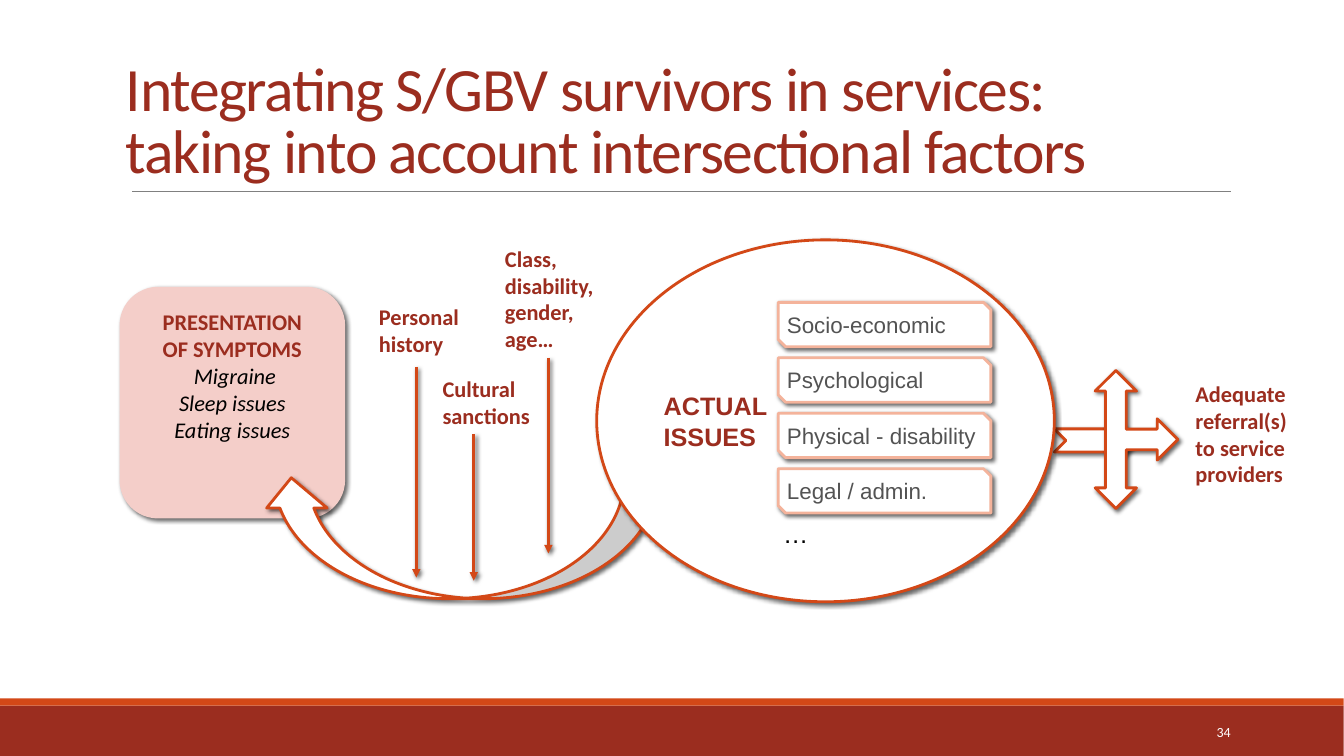
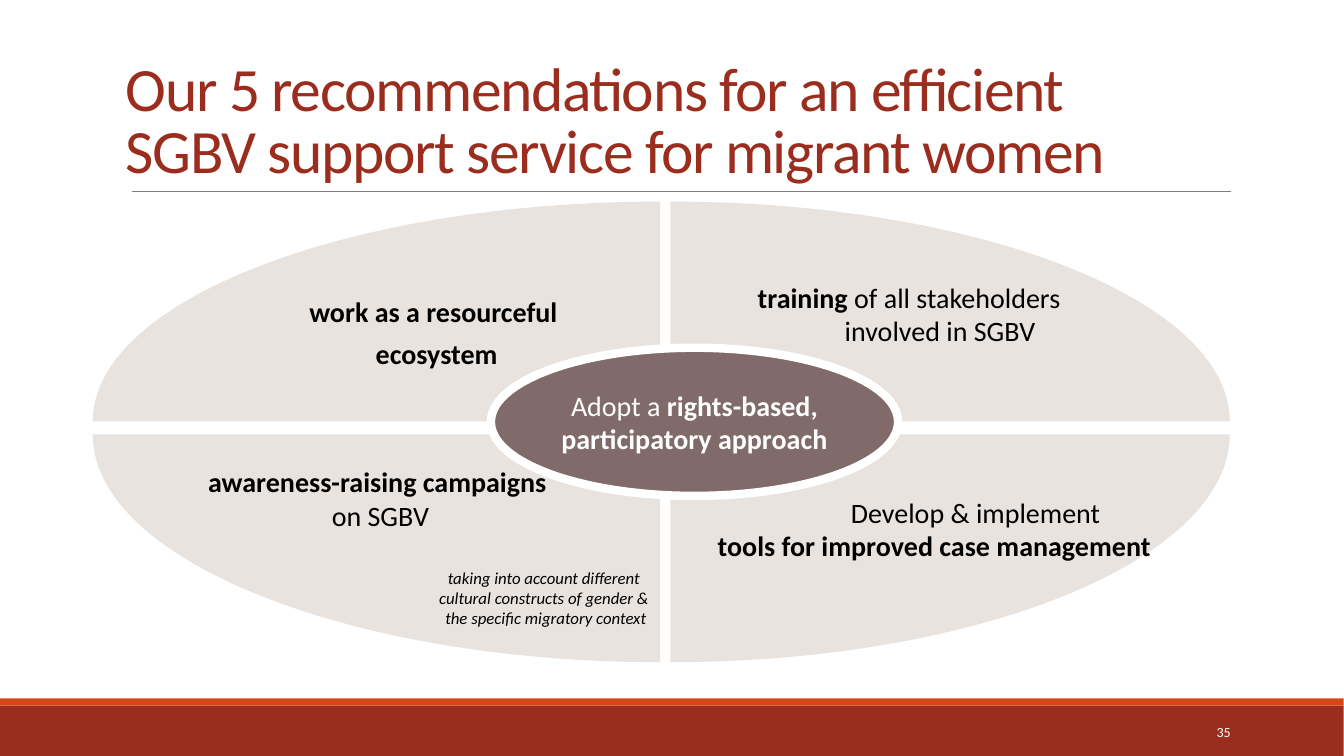
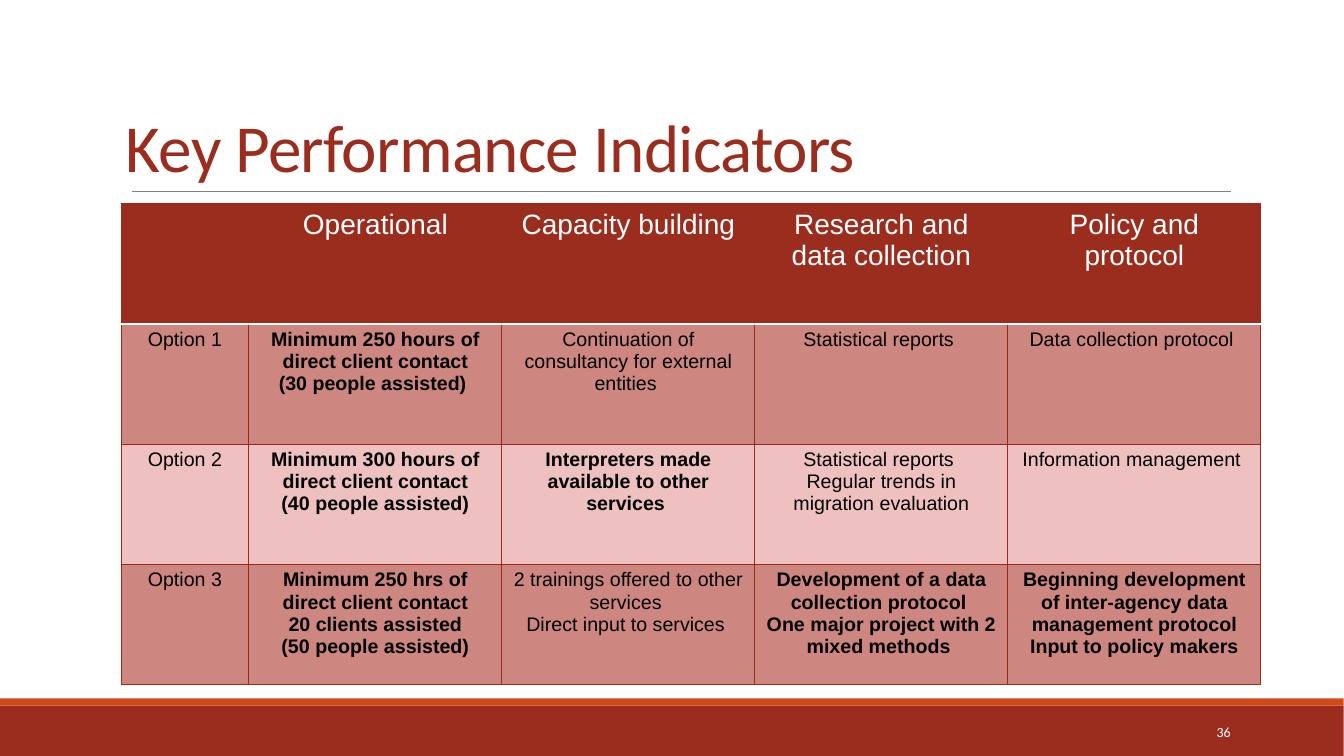
from lxml.etree import SubElement
from pptx import Presentation
from pptx.dml.color import RGBColor
from pptx.enum.shapes import MSO_CONNECTOR, MSO_SHAPE
from pptx.enum.text import MSO_ANCHOR, MSO_AUTO_SIZE, PP_ALIGN
from pptx.oxml.ns import qn
from pptx.util import Pt

PX = 9144
ARC = 0.55
BRICK, ORANGE, PEACH, ROSE = "9B2D1F", "D34817", "F4B39B", "F4CEC9"
WHITE, BLACK, GREY, RULE = "FFFFFF", "000000", "535353", "808080"
SAND, MAUVE = "E9E3DF", "806B6A"
BORDER, BAND_DARK, BAND_LIGHT = "9B2A1B", "CD8680", "EEC1C0"
LEFT, CENTER, RIGHT = PP_ALIGN.LEFT, PP_ALIGN.CENTER, PP_ALIGN.RIGHT
TOP, MIDDLE, BOTTOM = MSO_ANCHOR.TOP, MSO_ANCHOR.MIDDLE, MSO_ANCHOR.BOTTOM


def px(*lengths):
    """Turn px lengths into EMU."""
    return [round(n * PX) for n in lengths]


def rgb(color):
    """Turn a hex string into a colour."""
    return RGBColor.from_string(color)


def effects(sp, shadow):
    """Give a shape the soft shadow, or none."""
    lst = SubElement(sp.element.spPr, qn("a:effectLst"))
    if shadow:
        outer = SubElement(lst, qn("a:outerShdw"), blurRad=str(Pt(3)), dist=str(Pt(2)),
                           dir="2700000", algn="tl", rotWithShape="0")
        clr = SubElement(outer, qn("a:srgbClr"), val=BLACK)
        SubElement(clr, qn("a:alpha"), val="60000")


def paint(sp, fill, line=None, width=2):
    """Set the fill and outline of a shape."""
    sp.fill.solid()
    sp.fill.fore_color.rgb = rgb(fill)
    if line:
        sp.line.color.rgb = rgb(line)
        sp.line.width = Pt(width)
    else:
        sp.line.fill.background()


def shape(s, kind, box, fill, line=None, width=2, shadow=False, rotation=0):
    """Add a preset shape in a px box."""
    sp = s.shapes.add_shape(kind, *px(*box))
    sp.rotation = rotation
    paint(sp, fill, line, width)
    effects(sp, shadow)
    return sp


def connector(s, x1, y1, x2, y2, color, width, arrow=False):
    """Add a straight line, or a shadowed arrow."""
    cn = s.shapes.add_connector(MSO_CONNECTOR.STRAIGHT, *px(x1, y1, x2, y2))
    cn.line.color.rgb = rgb(color)
    cn.line.width = Pt(width)
    if arrow:
        SubElement(cn.element.spPr.find(qn("a:ln")), qn("a:tailEnd"), type="triangle")
    effects(cn, arrow)
    return cn


def frame(tf, insets=(5, 5, 5, 5), anchor=TOP):
    """Set the insets, anchor and wrapping of a text frame."""
    tf.margin_left, tf.margin_top, tf.margin_right, tf.margin_bottom = px(*insets)
    tf.vertical_anchor = anchor
    tf.word_wrap = True
    tf.auto_size = MSO_AUTO_SIZE.NONE


def write(tf, paras, size, color, font="Calibri", align=LEFT, bold=False):
    """Write paragraphs, each a string or a list of (text, style[, colour]) runs."""
    for i, runs in enumerate(paras):
        p = tf.paragraphs[0] if i == 0 else tf.add_paragraph()
        p.alignment = align
        for text, style, *own in [(runs, "")] if isinstance(runs, str) else runs:
            for n, line in enumerate(text.split("\n")):
                if n:
                    p.add_line_break()
                r = p.add_run()
                r.text = line
                r.font.name, r.font.size = font, Pt(size)
                r.font.bold = bold or "b" in style
                r.font.italic = "i" in style
                r.font.color.rgb = rgb(own[0] if own else color)


def label(s, box, paras, size, color, insets=(5, 5, 5, 5), anchor=TOP, **style):
    """Add a text box."""
    tf = s.shapes.add_textbox(*px(*box)).text_frame
    frame(tf, insets, anchor)
    write(tf, paras, size, color, **style)
    return tf


def build_layout(prs):
    """Draw the bands and title rule once, on the title-only layout."""
    layout = prs.slide_layouts[5]
    s = prs.slides.add_slide(layout)
    parts = [shape(s, MSO_SHAPE.RECTANGLE, (0, 700, 1333, 50), BRICK),
             shape(s, MSO_SHAPE.RECTANGLE, (0, 693, 1333, 7), ORANGE),
             connector(s, 131, 190, 1221, 190, RULE, 0.5)]
    for i, part in enumerate(parts):
        part.element.xpath(".//p:cNvPr")[0].set("id", str(20 + i))
        layout.shapes.element.append(part.element)
    return layout, s


def head(s, text, number, size=44, spacing=-100, width=1100):
    """Fill the title and add the page number."""
    title = s.shapes.title
    title.left, title.top, title.width, title.height = px(120, 31, width, 159)
    tf = title.text_frame
    frame(tf, anchor=BOTTOM)
    write(tf, [text], size, BRICK)
    tf.paragraphs[0].line_spacing = 0.85
    for rpr in title.element.iter(qn("a:rPr")):
        rpr.set("spc", str(spacing))
    label(s, (1180, 714, 46, 25), [str(number)], 10, WHITE, anchor=MIDDLE, align=RIGHT)


def symptoms(s, x, y):
    """Place the symptom box."""
    sp = shape(s, MSO_SHAPE.ROUNDED_RECTANGLE, (x, y, 221, 227), ROSE, ROSE, shadow=True)
    frame(sp.text_frame, (16, 9, 16, 9))
    write(sp.text_frame,
          [[("PRESENTATION OF SYMPTOMS", "b", BRICK)], [(" Migraine", "i")],
           [("Sleep issues", "i")], [("Eating issues", "i")]], 16, BLACK, align=CENTER)


def factor(s, x, y, w, h, text, dx, start, end):
    """Place a factor label with the arrow that leads down from it."""
    label(s, (x, y, w, h), [text], 16, BRICK, bold=True)
    connector(s, x + dx, y + start, x + dx, y + end, ORANGE, 2, arrow=True)


def issues(s, x, y):
    """Place the ellipse of actual issues and its list."""
    sp = shape(s, MSO_SHAPE.OVAL, (x, y, 454, 359), WHITE, ORANGE, shadow=True)
    frame(sp.text_frame, (0, 5, 5, 5), MIDDLE)
    write(sp.text_frame, ["ACTUAL", "ISSUES"], 18, BRICK, "Arial", bold=True)
    names = ("Socio-economic", "Psychological", "Physical - disability", "Legal / admin.")
    for i, name in enumerate(names):
        card = shape(s, MSO_SHAPE.SNIP_2_DIAG_RECTANGLE, (x + 180, y + 62 + 55 * i, 211, 44),
                     WHITE, PEACH, shadow=True)
        frame(card.text_frame, anchor=MIDDLE)
        write(card.text_frame, [name], 16, GREY, "Arial")
    label(s, (x + 180, y + 271, 73, 40), ["…"], 18, BLACK, font="Arial")


def referral(s, x, y):
    """Place the three-way arrow and the referral label."""
    shape(s, MSO_SHAPE.LEFT_RIGHT_UP_ARROW, (x, y + 23, 137, 82), WHITE, ORANGE,
          shadow=True, rotation=90)
    label(s, (x + 122, y, 152, 118), ["Adequate referral(s)", "to service providers"],
          16, BRICK, bold=True)


def factors_slide(s):
    """Build the slide on intersectional factors."""
    head(s, "Integrating S/GBV survivors in services:\n"
            "taking into account intersectional factors", 34)
    shape(s, MSO_SHAPE.NOTCHED_RIGHT_ARROW, (1046, 414, 82, 46), WHITE, ORANGE, shadow=True)
    symptoms(s, 120, 286)
    back = shape(s, MSO_SHAPE.CURVED_LEFT_ARROW, (396, 337, 120, 394), WHITE, ORANGE,
                 shadow=True, rotation=90)
    for i, value in enumerate((0.28, 0.5, 0.25)):
        back.adjustments[i] = value
    issues(s, 592, 238)
    referral(s, 1059, 372)
    factor(s, 371, 296, 99, 64, "Personal history", 42, 68, 277)
    factor(s, 434, 367, 99, 64, "Cultural sanctions", 36, 64, 209)
    factor(s, 496, 238, 130, 118, "Class, disability, gender, age…", 48, 117, 311)


def quadrant(s, x, y, rx, ry):
    """Draw a quarter ellipse with its corner at x, y and signed radii."""
    fb = s.shapes.build_freeform(*px(x, y))
    fb.add_line_segments([px(x, y + ry), px(x + rx, y)], close=True)
    sp = fb.convert_to_shape()
    first, last = sp.element.iter(qn("a:lnTo"))
    x1, y1, x2, y2 = (int(seg[0].get(axis)) for seg in (first, last) for axis in "xy")
    curve = SubElement(last.getparent(), qn("a:cubicBezTo"))
    for cx, cy in ((x1 + ARC * (x2 - x1), y1), (x2, y2 + ARC * (y1 - y2)), (x2, y2)):
        SubElement(curve, qn("a:pt"), x=str(round(cx)), y=str(round(cy)))
    last.getparent().replace(last, curve)
    paint(sp, SAND)
    effects(sp, False)


def advice(s, box, paras):
    """Place the centred text of one recommendation."""
    return label(s, box, paras, 20, BLACK, (0, 0, 0, 0), MIDDLE, align=CENTER)


def recommendations_slide(s):
    """Build the slide of four quadrants around a core."""
    head(s, "Our 5 recommendations for an efficient SGBV support service for migrant women",
         35, width=1069)
    for x, rx in ((665, 555), (655, -563)):
        for y, ry in ((431, 226), (418, -218)):
            quadrant(s, x, y, rx, ry)
    tf = advice(s, (204, 292, 452, 76), [[("work as a resourceful", "b")], [(" ecosystem", "b")]])
    tf.paragraphs[0].space_after = Pt(6)
    core = shape(s, MSO_SHAPE.OVAL, (487, 345, 404, 147), MAUVE, WHITE, 6)
    frame(core.text_frame, (0, 0, 0, 0), MIDDLE)
    write(core.text_frame, [[("Adopt a ", ""), ("rights-based, participatory approach", "b")]],
          20, WHITE, align=CENTER)
    tf = advice(s, (674, 278, 462, 67),
                [[("training", "b"), (" of all stakeholders ", "")], "involved in SGBV"])
    tf.paragraphs[1]._p.get_or_add_pPr().set("marL", str(55 * PX))
    advice(s, (126, 461, 503, 67), [[("awareness-raising campaigns ", "b")], "on SGBV"])
    label(s, (387, 558, 309, 71),
          [[(line, "i")] for line in ("taking into account different ",
                                      "cultural constructs of gender & ",
                                      "the specific migratory context")],
          12, BLACK, (10, 5, 10, 5), align=CENTER)
    tf = advice(s, (712, 491, 518, 67),
                ["Develop & implement ", [("tools for improved case management", "b")]])
    tf.paragraphs[1].alignment = LEFT


def style_cell(cell, fill, top, bottom):
    """Set the borders, then the fill, of a table cell."""
    tcpr = cell._tc.get_or_add_tcPr()
    side = (BORDER, 0.75)
    for tag, (color, width) in zip(("lnL", "lnR", "lnT", "lnB"), (side, side, top, bottom)):
        ln = SubElement(tcpr, qn("a:" + tag), w=str(Pt(width)))
        SubElement(SubElement(ln, qn("a:solidFill")), qn("a:srgbClr"), val=color)
    cell.fill.solid()
    cell.fill.fore_color.rgb = rgb(fill)


def kpi_table(s, x, y):
    """Place the table of indicators; a row holds (paragraphs, bold) cells."""
    rows = [
        [([], False), (["Operational"], False), (["Capacity building"], False),
         (["Research and data collection"], False), (["Policy and protocol"], False)],
        [(["Option 1"], False),
         (["Minimum 250 hours of direct client contact", "(30 people assisted) "], True),
         (["Continuation of consultancy for external entities "], False),
         (["Statistical reports "], False), (["Data collection protocol "], False)],
        [(["Option 2"], False),
         (["Minimum 300 hours of direct client contact", "(40 people assisted)"], True),
         (["Interpreters made available to other services "], True),
         (["Statistical reports ", "Regular trends in migration evaluation"], False),
         (["Information management "], False)],
        [(["Option 3"], False),
         (["Minimum 250 hrs of direct client contact", "20 clients assisted",
           "(50 people assisted)"], True),
         (["2 trainings offered to other services ", "Direct input to services "], False),
         (["Development of a data collection protocol ",
           "One major project with 2 mixed methods "], True),
         (["Beginning development of inter-agency data management protocol",
           "Input to policy makers"], True)],
    ]
    table = s.shapes.add_table(4, 5, *px(x, y, 1131, 477)).table
    table.first_row = table.horz_banding = False
    for col, w in zip(table.columns, px(127, 251, 251, 251, 251)):
        col.width = w
    thin, thick = (BORDER, 0.75), (WHITE, 2)
    fills = (BRICK, BAND_DARK, BAND_LIGHT, BAND_DARK)
    for i, row in enumerate(rows):
        for j, (paras, bold) in enumerate(row):
            cell = table.cell(i, j)
            style_cell(cell, fills[i], thick if i == 1 else thin, thick if i == 0 else thin)
            size, color = (14, BLACK) if i else (20, WHITE)
            write(cell.text_frame, paras, size, color, "Arial", CENTER, bold)


def indicators_slide(s):
    """Build the slide of indicators."""
    head(s, "Key Performance Indicators", 36, size=48, spacing=-50)
    kpi_table(s, 120, 202)


def main():
    """Build and save the deck."""
    prs = Presentation()
    prs.slide_width, prs.slide_height = px(1333.33, 750)
    layout, first = build_layout(prs)
    factors_slide(first)
    recommendations_slide(prs.slides.add_slide(layout))
    indicators_slide(prs.slides.add_slide(layout))
    prs.save("out.pptx")


if __name__ == "__main__":
    main()
